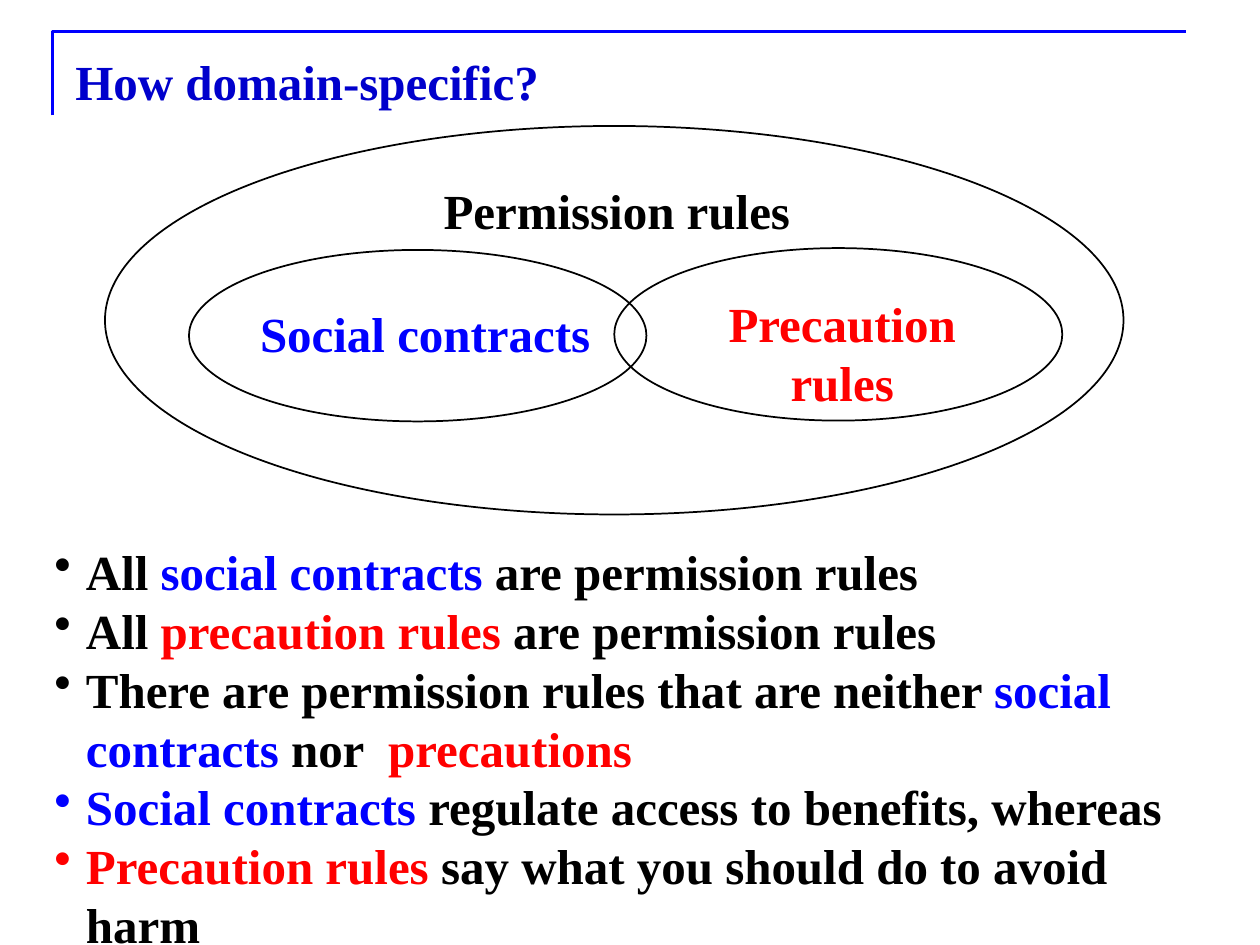
from pptx import Presentation
from pptx.dml.color import RGBColor
from pptx.enum.shapes import MSO_SHAPE as Shape
from pptx.enum.text import MSO_ANCHOR as Anchor, PP_ALIGN as Align
from pptx.oxml.ns import qn
from pptx.util import Pt
from lxml.etree import SubElement

BLACK, WHITE, BLUE, RED, NAVY = "000000", "FFFFFF", "0000FF", "FF0000", "0000CC"


def rgb(value):
    return RGBColor.from_string(value)


class Deck:
    """Holds the text style and the current slide, and draws each kind of element."""

    font = {"name": "Times New Roman", "size": Pt(28), "bold": True}

    def __init__(self, prs):
        self.s = prs.slides.add_slide(prs.slide_layouts[6])

    def add_runs(self, p, runs):
        for text, color in runs:
            r = p.add_run()
            r.text = text
            for key, value in self.font.items():
                setattr(r.font, key, value)
            r.font.color.rgb = rgb(color)

    def frame(self, sp, anchor=Anchor.TOP):
        tf = sp.text_frame
        for key, value in {"word_wrap": True, "vertical_anchor": anchor}.items():
            setattr(tf, key, value)
        return tf

    def box(self, *at):
        return self.s.shapes.add_textbox(*map(Pt, at))

    def corner(self, x, y, width, height):
        fb = self.s.shapes.build_freeform(Pt(x), Pt(y + height))
        fb.add_line_segments([(Pt(x), Pt(y)), (Pt(x + width), Pt(y))], close=False)
        self.outline(fb.convert_to_shape(), BLUE, 1.5)

    def outline(self, sp, color, width):
        sp.shadow.inherit = False
        sp.fill.background()
        sp.line.color.rgb = rgb(color)
        sp.line.width = Pt(width)

    def ellipse(self, *at):
        self.outline(self.s.shapes.add_shape(Shape.OVAL, *map(Pt, at)), BLACK, 1)

    def title(self, text, *at):
        tf = self.frame(self.box(*at), Anchor.MIDDLE)
        self.add_runs(tf.paragraphs[0], [(text, NAVY)])

    def label(self, text, color, *at):
        sp = self.s.shapes.add_shape(Shape.RECTANGLE, *map(Pt, at))
        sp.shadow.inherit = False
        sp.fill.solid()
        sp.fill.fore_color.rgb = rgb(WHITE)
        sp.line.fill.background()
        p = self.frame(sp).paragraphs[0]
        p.alignment = Align.CENTER
        self.add_runs(p, [(text, color)])

    def bullets(self, items, *at):
        tf = self.frame(self.box(*at))
        for i, runs in enumerate(items):
            p = tf.add_paragraph() if i else tf.paragraphs[0]
            pPr = p._p.get_or_add_pPr()
            pPr.set("marL", str(Pt(18)))
            pPr.set("indent", str(-Pt(18)))
            SubElement(pPr, qn("a:buChar")).set("char", "•")
            self.add_runs(p, runs)


def main():
    prs = Presentation()
    prs.slide_width, prs.slide_height = Pt(720), Pt(540)
    deck = Deck(prs)
    deck.corner(30, 18, 648, 48)
    deck.title("How domain-specific?", 36, 24, 648, 44)
    deck.ellipse(60, 72, 582, 222)
    deck.ellipse(108, 142.8, 261.4, 98)
    deck.label("Permission rules", BLACK, 228, 99.4, 249, 31)
    deck.label("Social contracts", BLUE, 134.6, 170, 216.7, 39.6)
    deck.ellipse(351, 141.8, 256, 98.6)
    deck.label("Precaution rules", RED, 379.4, 164, 203.8, 39.6)
    deck.bullets([
        [("All ", BLACK), ("social contracts", BLUE), (" are permission rules", BLACK)],
        [("All ", BLACK), ("precaution rules", RED), (" are permission rules", BLACK)],
        [("There are permission rules that are neither ", BLACK),
         ("social contracts", BLUE), (" nor  ", BLACK), ("precautions", RED)],
        [("Social contracts", BLUE), (" regulate access to benefits, whereas", BLACK)],
        [("Precaution rules", RED), (" say what you should do to avoid harm", BLACK)],
    ], 24, 306, 672, 242.6)
    prs.save("out.pptx")


if __name__ == "__main__":
    main()
